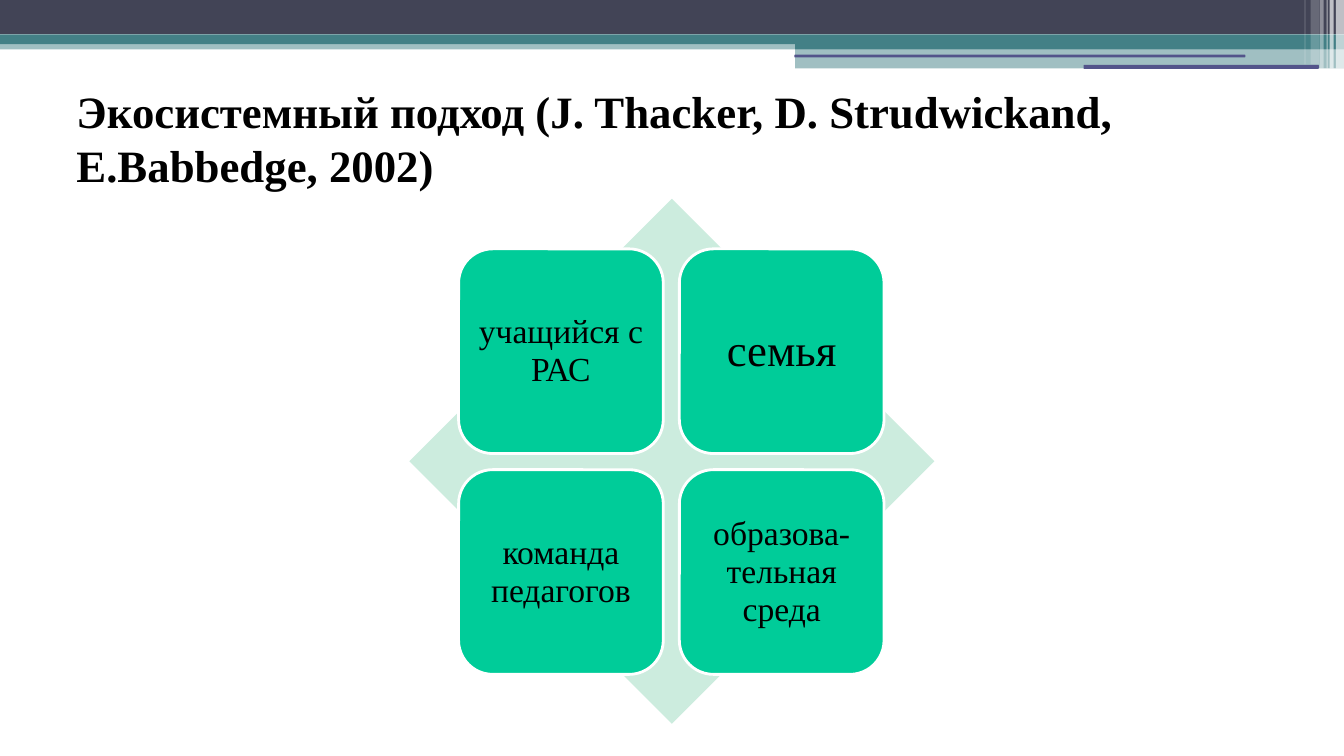
from dataclasses import dataclass

from lxml import etree
from pptx import Presentation
from pptx import util as u
from pptx.dml.color import RGBColor
from pptx.enum import shapes, text
from pptx.oxml.ns import qn

FONT = "Times New Roman"
WHITE, BLACK = "FFFFFF", "000000"
NAVY, TEAL, VIOLET = "424456", "438086", "53548A"
MINT, GREEN = "CCECDE", "00CC99"
RECT = shapes.MSO_SHAPE.RECTANGLE
ROUND = shapes.MSO_SHAPE.ROUNDED_RECTANGLE
DIAMOND = shapes.MSO_SHAPE.DIAMOND

PAGE_WIDTH, PAGE_HEIGHT = 960, 540
TILE_LEFT, TILE_TOP = 327.6, 177.8
TILE_SIZE, TILE_STEP = 146.2, 157.7


@dataclass(frozen=True)
class Block:
    """A filled shape; lengths in points, opacity in percent."""
    left: float
    top: float
    width: float
    height: float
    color: str
    opacity: int = 100
    kind: int = RECT


@dataclass(frozen=True)
class Tile:
    label: str
    size: int = 24


BANDS = [
    Block(0, 28.8, 960, 6.5, TEAL, 50),
    Block(0, 0, 960, 24.5, NAVY),
    Block(0, 24.5, 960, 7, TEAL),
    Block(568, 28, 392, 7.2, TEAL),
    Block(568, 34.9, 392, 14, TEAL, 50),
    Block(567.5, 39, 322, 2, VIOLET, kind=ROUND),
    Block(774, 46.3, 168, 2.9, VIOLET, kind=ROUND),
]
STRIPES = [
    Block(left, 0, width, height, WHITE, opacity)
    for left, width, height, opacity in [
        (954.2, 5.8, 49, 66),
        (949.8, 2.9, 49, 66),
        (947.6, 0.7, 49, 60),
        (942.6, 2.9, 49, 40),
        (936.2, 5.8, 46, 20),
        (931.8, 0.7, 46, 31),
    ]
]
BACKDROP = Block(292.4, 142, 375, 375, MINT, kind=DIAMOND)
TILES = [
    Tile("учащийся с РАС"),
    Tile("семья", 32),
    Tile("команда педагогов"),
    Tile("образова-тельная среда"),
]


def paint(target, color: str) -> None:
    """Give a fill or a line format a solid colour."""
    target.solid()
    target.fore_color.rgb = RGBColor.from_string(color)


def add_block(page, block: Block):
    box = page.shapes.add_shape(
        block.kind, *map(u.Pt, (block.left, block.top, block.width, block.height)))
    box.shadow.inherit = False
    paint(box.fill, block.color)
    box.line.fill.background()
    if block.opacity < 100:
        tint = box.fill._xPr.find(qn("a:solidFill"))[0]
        etree.SubElement(tint, qn("a:alpha"), val=str(block.opacity * 1000))
    return box


def write(box, label: str, frame_format: dict, para_format: dict, font_format: dict) -> None:
    frame = box.text_frame
    para = frame.paragraphs[0]
    span = para.add_run()
    span.text = label
    span.font.color.rgb = RGBColor.from_string(BLACK)
    for target, values in ((frame, frame_format), (para, para_format),
                           (span.font, {"name": FONT, **font_format})):
        for name, value in values.items():
            setattr(target, name, value)


def add_title(page, label: str) -> None:
    box = page.shapes.add_textbox(*map(u.Pt, (47.5, 52.6, 863.3, 90)))
    write(box, label,
          {"word_wrap": True, "vertical_anchor": text.MSO_ANCHOR.TOP,
           "margin_left": u.Pt(7.2), "margin_right": u.Pt(7.2),
           "margin_top": u.Pt(7.2), "margin_bottom": u.Pt(3.6)},
          {"alignment": text.PP_ALIGN.LEFT, "line_spacing": 1.0},
          {"size": u.Pt(32), "bold": True})


def add_tile(page, tile: Tile, row: int, column: int) -> None:
    box = add_block(page, Block(
        TILE_LEFT + column * TILE_STEP, TILE_TOP + row * TILE_STEP,
        TILE_SIZE, TILE_SIZE, GREEN, kind=ROUND))
    paint(box.line.fill, WHITE)
    box.line.width = u.Pt(2)
    margins = {f"margin_{side}": u.Pt(6) for side in ("left", "top", "right", "bottom")}
    write(box, tile.label,
          {"word_wrap": True, "vertical_anchor": text.MSO_ANCHOR.MIDDLE, **margins},
          {"alignment": text.PP_ALIGN.CENTER, "line_spacing": 0.95},
          {"size": u.Pt(tile.size)})


def main() -> None:
    deck = Presentation()
    deck.slide_width, deck.slide_height = u.Pt(PAGE_WIDTH), u.Pt(PAGE_HEIGHT)
    page = deck.slides.add_slide(deck.slide_layouts[6])
    paint(page.background.fill, WHITE)
    for block in BANDS + STRIPES:
        add_block(page, block)
    add_title(page, "Экосистемный подход (J. Thacker, D. Strudwickand, E.Babbedge, 2002)")
    add_block(page, BACKDROP)
    for index, tile in enumerate(TILES):
        add_tile(page, tile, *divmod(index, 2))
    deck.save("out.pptx")


if __name__ == "__main__":
    main()
